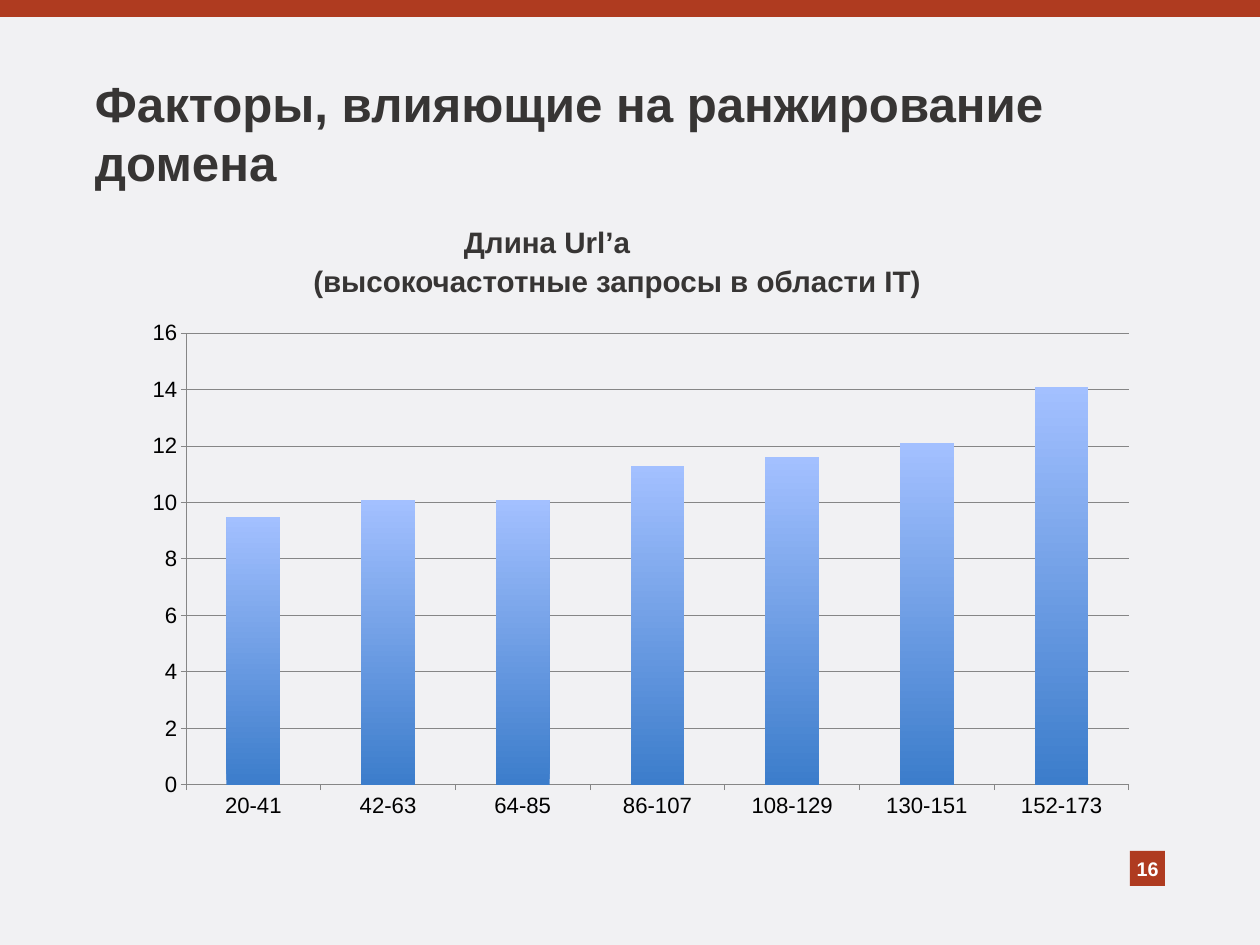
from pptx import Presentation
from pptx.chart.data import CategoryChartData
from pptx.dml.color import RGBColor
from pptx.enum.chart import XL_CHART_TYPE, XL_TICK_MARK
from pptx.enum.shapes import MSO_SHAPE
from pptx.enum.text import MSO_ANCHOR, PP_ALIGN
from pptx.oxml import parse_xml
from pptx.oxml.ns import nsdecls
from pptx.util import Pt

TITLE = "Факторы, влияющие на ранжирование домена"
HEADS = [("Длина Url’а", 0), ("(высокочастотные запросы в области IT)", 140)]
PAGE = "16"
DATA = {
    "20-41": 9.5,
    "42-63": 10.1,
    "64-85": 10.1,
    "86-107": 11.3,
    "108-129": 11.6,
    "130-151": 12.1,
    "152-173": 14.1,
}
WIDE, HIGH = 1260, 945
BAND = (0, 0, WIDE, 17)
BADGE = (1130, 851, 35, 35)
FRAME = (133, 311, 1017, 518)
PLOT = (186, 333, 943, 452)

FONT = "Arial"
PAPER = RGBColor(0xF1, 0xF1, 0xF3)
RUST = RGBColor(0xAF, 0x3B, 0x20)
DARK = RGBColor(0x37, 0x35, 0x34)
WHITE = RGBColor(0xFF, 0xFF, 0xFF)
BLACK = RGBColor(0, 0, 0)
GREY = RGBColor(0x86, 0x86, 0x86)
DEEP = RGBColor(0x3C, 0x7D, 0xCB)
PALE = RGBColor(0xA3, 0xC0, 0xFF)

LEFT, CENTER = PP_ALIGN.LEFT, PP_ALIGN.CENTER
TOP, MIDDLE = MSO_ANCHOR.TOP, MSO_ANCHOR.MIDDLE
RECT = MSO_SHAPE.RECTANGLE
COLUMN = XL_CHART_TYPE.COLUMN_CLUSTERED
OUT, NONE = XL_TICK_MARK.OUTSIDE, XL_TICK_MARK.NONE
SCALE = 10320


def emu(box):
    return [n * SCALE for n in box]


def style(font, size, color, bold):
    font.name, font.size, font.bold = FONT, Pt(size), bold
    font.color.rgb = color


def write(shape, text, size, color, align, anchor):
    frame = shape.text_frame
    frame.word_wrap = True
    frame.vertical_anchor = anchor
    frame.margin_left = frame.margin_right = 0
    frame.margin_top = frame.margin_bottom = 0
    frame.text = text
    for para in frame.paragraphs:
        para.alignment = align
        for run in para.runs:
            style(run.font, size, color, True)
    return frame


def block(slide, box):
    shape = slide.shapes.add_shape(RECT, *emu(box))
    shape.shadow.inherit = False
    shape.fill.solid()
    shape.fill.fore_color.rgb = RUST
    shape.line.fill.background()
    return shape


def graph(slide):
    data = CategoryChartData()
    data.categories = list(DATA)
    data.add_series("Series 1", list(DATA.values()))
    chart = slide.shapes.add_chart(COLUMN, *emu(FRAME), data).chart
    chart.has_legend = chart.has_title = False
    style(chart.font, 18, BLACK, False)

    axis = chart.value_axis
    axis.minimum_scale, axis.maximum_scale, axis.major_unit = 0, 16, 2
    axis.has_major_gridlines = True
    axis.major_gridlines.format.line.color.rgb = GREY
    axis.major_gridlines.format.line.width = Pt(0.75)
    for side in (axis, chart.category_axis):
        side.major_tick_mark, side.minor_tick_mark = OUT, NONE
        side.format.line.color.rgb = GREY
        side.format.line.width = Pt(0.75)

    plot = chart.plots[0]
    plot.gap_width = 150
    plot.vary_by_categories = False
    fill = plot.series[0].format.fill
    fill.gradient()
    fill.gradient_angle = 90
    for stop, color in zip(fill.gradient_stops, (DEEP, PALE)):
        stop.color.rgb = color

    left, top, wide, high = FRAME
    parts = {
        "x": (PLOT[0] - left) / wide,
        "y": (PLOT[1] - top) / high,
        "w": PLOT[2] / wide,
        "h": PLOT[3] / high,
    }
    modes = "".join(f'<c:{k}Mode val="edge"/>' for k in "xy")
    sizes = "".join(f'<c:{k} val="{v:.4f}"/>' for k, v in parts.items())
    area = chart.element.chart.plotArea
    for old in area.findall("{*}layout"):
        area.remove(old)
    area.insert(0, parse_xml(
        f'<c:layout {nsdecls("c")}><c:manualLayout><c:layoutTarget val="inner"/>'
        f"{modes}{sizes}</c:manualLayout></c:layout>"))


def main():
    deck = Presentation()
    deck.slide_width, deck.slide_height = emu((WIDE, HIGH))
    slide = deck.slides.add_slide(deck.slide_layouts[6])
    slide.background.fill.solid()
    slide.background.fill.fore_color.rgb = PAPER

    block(slide, BAND)
    write(block(slide, BADGE), PAGE, 16, WHITE, CENTER, MIDDLE)

    title = slide.shapes.add_textbox(*emu((95, 74, 1045, 116)))
    write(title, TITLE, 40, DARK, LEFT, MIDDLE)

    head = slide.shapes.add_textbox(*emu((77, 220, 940, 80)))
    text = "\n".join(line for line, _ in HEADS)
    frame = write(head, text, 24, DARK, CENTER, TOP)
    for para, (_, shift) in zip(frame.paragraphs, HEADS):
        para.line_spacing = 1.1
        para._p.get_or_add_pPr().set("marL", str(shift * SCALE))

    graph(slide)
    deck.save("out.pptx")


if __name__ == "__main__":
    main()
